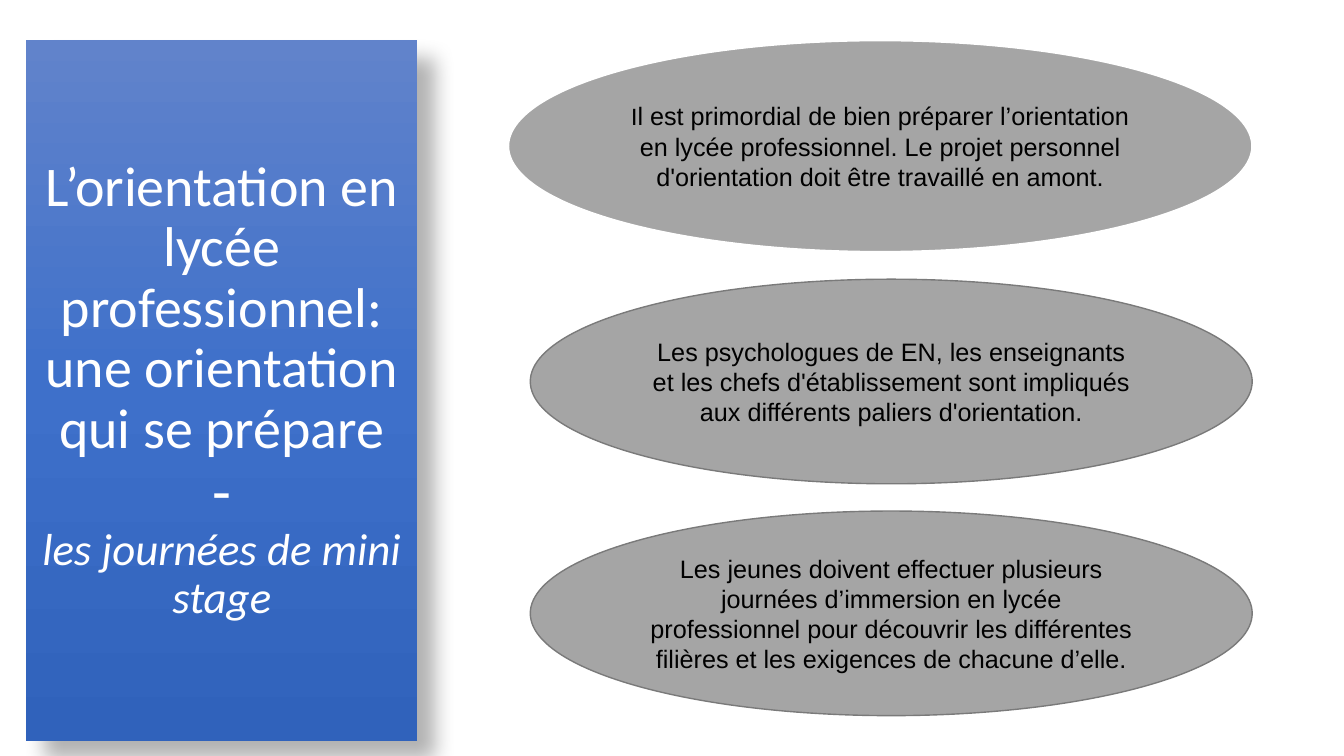
from lxml import etree
from pptx import Presentation
from pptx import util as u
from pptx.dml.color import RGBColor
from pptx.enum import shapes, text
from pptx.oxml import ns

SLIDE_W, SLIDE_H = 13.33, 7.5
COLOURS = {
    "panel_top": "6183CB", "panel_middle": "3E70CA", "panel_bottom": "3062BB",
    "bubble": "A5A5A5", "edge": "7A7A7A",
    "white": "FFFFFF", "black": "000000",
}
MIDDLE = text.MSO_ANCHOR.MIDDLE
CENTER = text.PP_ALIGN.CENTER

# Wording: (text, size, italic) for the title, (text, font) for the messages
TITLE_LINES = [
    ("L’orientation en lycée professionnel: une orientation qui se prépare", 40, False),
    ("-", 44, False),
    ("les journées de mini stage", 32, True),
]
PREPARATION = [
    ("I", "Calibri"),
    ("l est primordial de bien préparer l’orientation en lycée professionnel. "
     "Le projet personnel d'orientation doit être travaillé en amont.", "Arial"),
]
GUIDANCE_STAFF = [
    ("Les psychologues de EN, les enseignants et les chefs d'établissement sont "
     "impliqués aux différents paliers d'orientation.", "Arial"),
]
IMMERSION = [
    ("Les jeunes doivent effectuer plusieurs journées d’immersion en lycée "
     "professionnel pour découvrir les différentes filières et les exigences "
     "de chacune d’elle.", "Arial"),
]


def rgb(name):
    return RGBColor.from_string(COLOURS[name])


def place(shape, left, top, width, height):
    shape.left, shape.top = u.Inches(left), u.Inches(top)
    shape.width, shape.height = u.Inches(width), u.Inches(height)


def add_run(paragraph, wording, size, font, colour, italic=False):
    run = paragraph.add_run()
    run.text = wording
    run.font.size = u.Pt(size)
    run.font.name = font
    run.font.italic = italic
    run.font.color.rgb = rgb(colour)


def child(parent, tag, **attributes):
    return etree.SubElement(parent, ns.qn(tag), **attributes)


def shade_panel(panel):
    """Three-stop vertical gradient and a soft diagonal shadow."""
    properties = panel.element.spPr
    gradient = child(properties, "a:gradFill", rotWithShape="1")
    stops = child(gradient, "a:gsLst")
    for index, name in enumerate(("panel_top", "panel_middle", "panel_bottom")):
        stop = child(stops, "a:gs", pos=str(index * 50000))
        child(stop, "a:srgbClr", val=COLOURS[name])
    child(gradient, "a:lin", ang=str(90 * 60000), scaled="0")

    effects = child(properties, "a:effectLst")
    shadow = child(effects, "a:outerShdw", blurRad=str(u.Pt(15)),
                   dist=str(u.Pt(18)), dir=str(45 * 60000),
                   algn="tl", rotWithShape="0")
    shadow_colour = child(shadow, "a:srgbClr", val=COLOURS["black"])
    child(shadow_colour, "a:alpha", val="30000")


def format_title(title):
    place(title, 0.26, 0.4, 3.88, 6.95)
    shade_panel(title)
    frame = title.text_frame
    frame.word_wrap = True
    frame.auto_size = text.MSO_AUTO_SIZE.NONE
    frame.vertical_anchor = MIDDLE
    paragraph = frame.paragraphs[0]
    paragraph.alignment = CENTER
    paragraph.line_spacing = 0.9
    paragraph.space_before = u.Pt(0)
    for index, (wording, size, italic) in enumerate(TITLE_LINES):
        if index:
            paragraph.add_line_break()
        add_run(paragraph, wording, size, "Calibri", "white", italic)


def add_bubble(slide, box, runs, edge, edge_width):
    bubble = slide.shapes.add_shape(
        shapes.MSO_SHAPE.OVAL, *(u.Inches(length) for length in box))
    bubble.shadow.inherit = False
    bubble.fill.solid()
    bubble.fill.fore_color.rgb = rgb("bubble")
    bubble.line.color.rgb = rgb(edge)
    bubble.line.width = u.Pt(edge_width)
    frame = bubble.text_frame
    frame.word_wrap = True
    frame.vertical_anchor = MIDDLE
    paragraph = frame.paragraphs[0]
    paragraph.alignment = CENTER
    for wording, font in runs:
        add_run(paragraph, wording, 18, font, "black")


def main():
    deck = Presentation()
    deck.slide_width, deck.slide_height = u.Inches(SLIDE_W), u.Inches(SLIDE_H)
    slide = deck.slides.add_slide(deck.slide_layouts.get_by_name("Title Only"))

    # Title panel on the left
    format_title(slide.shapes.title)

    # Larger opening message, then two equal ones in a column
    add_bubble(slide, (5.04, 0.4, 7.38, 2.1), PREPARATION, "white", 1.5)
    for row, message in enumerate((GUIDANCE_STAFF, IMMERSION)):
        add_bubble(slide, (5.26, 2.77 + 2.3 * row, 7.16, 2.03), message, "edge", 1)

    deck.save("out.pptx")


if __name__ == "__main__":
    main()
